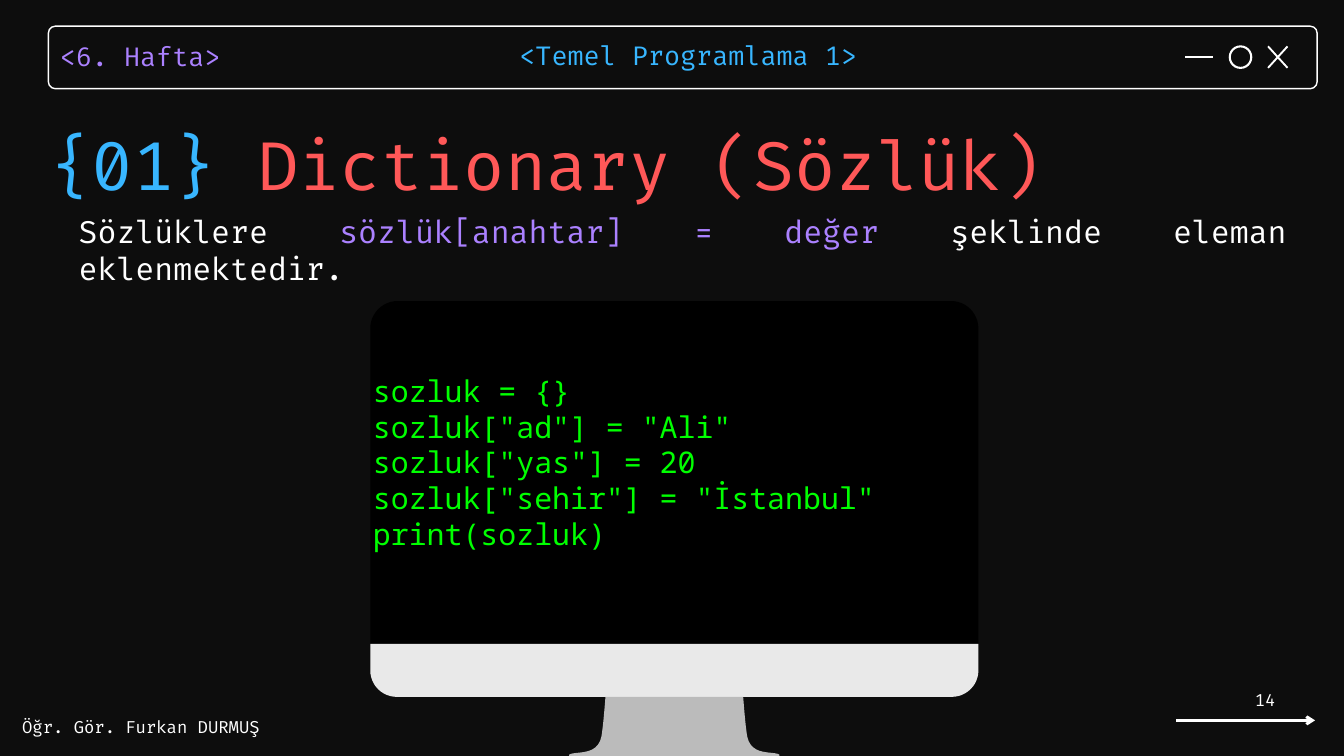
from lxml import etree
from pptx import Presentation, util as u
from pptx.dml.color import RGBColor
from pptx.enum import shapes, text
from pptx.oxml.ns import qn

COLUMNS, ROWS = 20, 11.25
COLORS = {
    "night": "0D0D0D", "black": "000000", "white": "FFFFFF", "purple": "AB81FF",
    "blue": "38B6FF", "red": "FF5858", "green": "00FF00",
    "chin": "E9E9E9", "stand": "BBBBBB",
}
CODE = [
    'sozluk = {}',
    'sozluk["ad"] = "Ali"',
    'sozluk["yas"] = 20',
    'sozluk["sehir"] = "İstanbul"',
    'print(sozluk)',
]


def bezier(start, first, second, end, steps=12):
    """Points along a cubic curve, leaving out its start."""
    points = []
    for step in range(1, steps + 1):
        t = step / steps
        weights = ((1 - t) ** 3, 3 * t * (1 - t) ** 2, 3 * t * t * (1 - t), t ** 3)
        points.append(tuple(
            sum(w * p[axis] for w, p in zip(weights, (start, first, second, end)))
            for axis in (0, 1)))
    return points


class Painter:
    """Places styled elements on a slide by grid columns and rows."""

    def __init__(self, deck, font="Fira Code"):
        self.font = font
        self.column = deck.slide_width / COLUMNS
        self.row = deck.slide_height / ROWS
        self.page = deck.slides.add_slide(deck.slide_layouts[6])
        self.page.background.fill.solid()
        self.page.background.fill.fore_color.rgb = self.color("night")

    def color(self, name):
        return RGBColor.from_string(COLORS[name])

    def place(self, x, y):
        return round(x * self.column), round(y * self.row)

    def finish(self, shape, fill=None, line=None, width=1):
        shape.shadow.inherit = False
        if fill:
            shape.fill.solid()
            shape.fill.fore_color.rgb = self.color(fill)
        else:
            shape.fill.background()
        if line:
            shape.line.color.rgb = self.color(line)
            shape.line.width = u.Pt(width)
        else:
            shape.line.fill.background()

    def shape(self, kind, at, adjustments=(), **style):
        shape = self.page.shapes.add_shape(kind, *self.place(*at[:2]), *self.place(*at[2:]))
        for index, value in enumerate(adjustments):
            shape.adjustments[index] = value
        self.finish(shape, **style)

    def outline(self, points, **style):
        start, *rest = [self.place(*point) for point in points]
        builder = self.page.shapes.build_freeform(*start, scale=1.0)
        builder.add_line_segments(rest, close=True)
        self.finish(builder.convert_to_shape(), **style)

    def line(self, start, end, width=2, arrow=False):
        line = self.page.shapes.add_connector(
            shapes.MSO_CONNECTOR.STRAIGHT, *self.place(*start), *self.place(*end))
        line.line.color.rgb = self.color("white")
        line.line.width = u.Pt(width)
        properties = line._element.spPr
        if arrow:
            etree.SubElement(properties.find(qn("a:ln")), qn("a:tailEnd"), type="arrow")
        etree.SubElement(properties, qn("a:effectLst"))

    def text(self, at, paragraphs, size, font=None, leading=None, align="LEFT", **frame):
        """Each paragraph is a list of (words, colour) spans."""
        box = self.page.shapes.add_textbox(*self.place(*at[:2]), *self.place(*at[2:]))
        settings = {
            "word_wrap": True, "auto_size": text.MSO_AUTO_SIZE.SHAPE_TO_FIT_TEXT,
            "margin_left": 0, "margin_right": 0, "margin_top": 0, "margin_bottom": 0,
        }
        for name, value in (settings | frame).items():
            setattr(box.text_frame, name, value)
        for index, spans in enumerate(paragraphs):
            para = box.text_frame.add_paragraph() if index else box.text_frame.paragraphs[0]
            para.alignment = text.PP_ALIGN[align]
            if leading:
                para.line_spacing = u.Pt(leading)
            for words, color in spans:
                span = para.add_run()
                span.text = words
                for name, value in {"name": font or self.font, "size": u.Pt(size)}.items():
                    setattr(span.font, name, value)
                span.font.color.rgb = self.color(color)


def draw_window_bar(painter):
    kind = shapes.MSO_SHAPE
    painter.text((0.89, 0.52, 3.4, 0.53), [[("<6. Hafta>", "purple")]], 28, leading=39.2)
    painter.shape(kind.ROUNDED_RECTANGLE, (0.72, 0.39, 18.88, 0.93), [0.11],
                  line="white", width=1.5)
    painter.line((18.87, 0.69), (19.16, 1.01))
    painter.line((19.16, 0.69), (18.87, 1.01))
    painter.line((17.64, 0.85), (18.05, 0.85))
    painter.shape(kind.OVAL, (18.3, 0.69, 0.32, 0.32), line="white", width=2.25)
    painter.text((7.73, 0.51, 5.29, 0.53), [[("<Temel Programlama 1>", "blue")]], 28,
                 leading=39.2)


def draw_footer(painter):
    painter.line((17.5, 10.72), (19.57, 10.72), width=3, arrow=True)
    painter.text((0.33, 10.67, 3.67, 0.3), [[("Öğr. Gör. Furkan DURMUŞ", "white")]], 18)
    painter.text((16.75, 10.21, 2.33, 0.4), [[("14", "white")]], 18, align="RIGHT",
                 vertical_anchor=text.MSO_ANCHOR.MIDDLE, margin_right=u.Inches(0.1),
                 auto_size=text.MSO_AUTO_SIZE.NONE)


def draw_monitor(painter):
    kind = shapes.MSO_SHAPE
    left, top, width, height, chin = 5.51, 4.48, 9.05, 5.1, 0.79
    bottom = top + height + chin
    painter.shape(kind.ROUND_2_SAME_RECTANGLE, (left, top, width, height), [0.08, 0],
                  fill="black")
    painter.shape(kind.ROUND_2_SAME_RECTANGLE, (left, top + height, width, chin), [0, 0.5],
                  fill="chin")

    neck, waist, foot = (9.01, bottom), (8.95, 10.96), (8.47, 11.23)
    half = [neck, *bezier(neck, neck, (8.98, 10.79), waist),
            *bezier(waist, (8.89, 11.26), (8.56, 11.17), foot), (8.47, ROWS)]
    middle = left + width / 2
    mirrored = [(2 * middle - x, y) for x, y in reversed(half)]
    painter.outline(half + mirrored, fill="stand")

    painter.shape(kind.RECTANGLE, (5.9, 4.78, 8.32, 4.54), fill="black", line="black", width=2)
    painter.text((5.55, 5.54, width, 2.69), [[(line, "green")] for line in CODE], 32,
                 font="Noto Sans Mono")


def main():
    deck = Presentation()
    deck.slide_width, deck.slide_height = u.Inches(COLUMNS), u.Inches(ROWS)
    painter = Painter(deck)
    draw_window_bar(painter)
    draw_footer(painter)
    painter.text((0.75, 1.61, 19.25, 1.41),
                 [[("{01} ", "blue"), ("Dictionary (Sözlük)", "red")]], 72, leading=102.6)
    draw_monitor(painter)
    painter.text((1.17, 3.17, 17.98, 1.11), [[
        ("Sözlüklere ", "white"), ("sözlük[anahtar] = değer ", "purple"),
        ("şeklinde eleman eklenmektedir.", "white")]], 33, align="JUSTIFY")
    deck.save("out.pptx")


if __name__ == "__main__":
    main()
